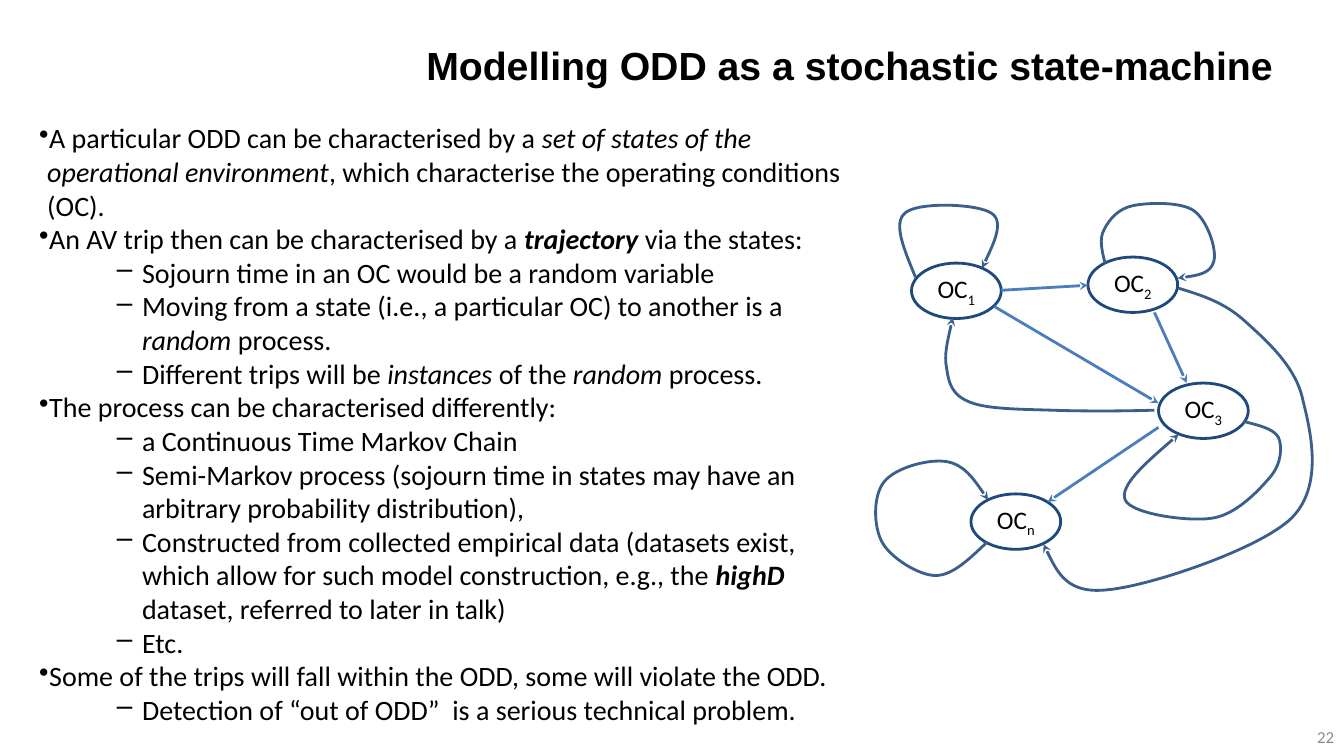
import pptx
import pptx.util
import pptx.dml.color
import pptx.enum.shapes
import pptx.enum.text
import pptx.oxml
import pptx.oxml.ns
from lxml import etree

RGBColor = pptx.dml.color.RGBColor
BLACK = RGBColor(0x00, 0x00, 0x00)
WHITE = RGBColor(0xFF, 0xFF, 0xFF)
GREY = RGBColor(0x8C, 0x8C, 0x8C)
NAVY = RGBColor(0x1F, 0x49, 0x7D)
SLATE = RGBColor(0x3A, 0x5F, 0x8C)
BLUE = RGBColor(0x4B, 0x7E, 0xBC)
ALIGN = pptx.enum.text.PP_ALIGN
MIDDLE = pptx.enum.text.MSO_ANCHOR.MIDDLE
Inches = pptx.util.Inches

BODY = [
    (0, "A particular ODD can be characterised by a |i:set of states of the operational environment"
        "|, which characterise the operating conditions (OC)."),
    (0, "An AV trip then can be characterised by a |bi:trajectory| via the states:"),
    (3, "Sojourn time in an OC would be a random variable"),
    (3, "Moving from a state (i.e., a particular OC) to another is a |i:random| process."),
    (3, "Different trips will be |i:instances| of the |i:random| process."),
    (0, "The process can be characterised differently:"),
    (3, "a Continuous Time Markov Chain"),
    (3, "Semi-Markov process (sojourn time in states may have an arbitrary probability distribution),"),
    (3, "Constructed from collected empirical data (datasets exist, which allow for such model "
        "construction, e.g., the |bi:highD| dataset, referred to later in talk)"),
    (3, "Etc."),
    (0, "Some of the trips will fall within the ODD, some will violate the ODD."),
    (3, "Detection of “out of ODD”  is a serious technical problem."),
]
INDENT = {0: ("•", 0.08, -0.38), 3: ("–", 1.02, -0.25)}

STATES = [("1", 0.35, 0.59), ("2", 2.1, 0.53), ("3", 2.8, 1.78), ("n", 0.94, 2.88)]
MOVES = [
    (1.24, 0.86, 2.1, 0.81),
    (1.17, 1.02, 2.8, 1.98),
    (2.8, 2.22, 1.7, 2.96),
    (2.76, 1.08, 3.08, 1.78),
]
CURVES = [
    [(0.39, 0.73), (0.28, 0.46), (0.16, 0.19), (0.29, 0.09), (0.42, -0.02), (1.02, 0),
     (1.15, 0.1), (1.28, 0.19), (1.05, 0.64), (1.05, 0.64)],
    [(3, 0.84), (3.23, 0.91), (3.45, 0.98), (3.65, 1.16), (3.86, 1.35), (4.16, 1.61),
     (4.23, 1.94), (4.31, 2.26), (4.44, 2.8), (4.12, 3.12), (3.8, 3.43), (2.72, 3.79),
     (2.31, 3.83), (1.9, 3.88), (1.78, 3.63), (1.66, 3.38)],
    [(2.76, 2.05), (2.4, 2.06), (2.04, 2.06), (1.74, 2.05), (1.43, 2.04), (1.1, 2.04),
     (0.93, 1.97), (0.75, 1.9), (0.72, 1.78), (0.7, 1.64), (0.67, 1.5), (0.72, 1.32),
     (0.76, 1.13)],
    [(2.27, 0.59), (2.24, 0.47), (2.21, 0.35), (2.26, 0.26), (2.31, 0.16), (2.4, 0.05),
     (2.55, 0.02), (2.7, -0.01), (3.02, -0.02), (3.15, 0.07), (3.29, 0.17), (3.38, 0.46),
     (3.35, 0.57), (3.32, 0.69), (3.16, 0.72), (2.99, 0.74)],
    [(3.64, 2.16), (3.79, 2.2), (3.94, 2.23), (3.99, 2.32), (4.03, 2.41), (4.02, 2.58),
     (3.91, 2.71), (3.8, 2.84), (3.58, 3.08), (3.34, 3.12), (3.1, 3.16), (2.53, 3.08),
     (2.47, 2.94), (2.41, 2.8), (2.71, 2.54), (3, 2.29)],
    [(1.1, 3.36), (0.93, 3.52), (0.76, 3.69), (0.59, 3.69), (0.42, 3.69), (0.14, 3.51),
     (0.06, 3.36), (-0.03, 3.2), (-0.03, 2.89), (0.08, 2.76), (0.19, 2.62), (0.52, 2.53),
     (0.7, 2.56), (0.87, 2.59), (0.99, 2.76), (1.11, 2.94)],
]


def style(para, size, color, name="Calibri", bold=None):
    """Set the font that all runs of a paragraph share."""
    font = para.font
    font.size, font.name, font.bold = pptx.util.Pt(size), name, bold
    font.color.rgb = color


def frame(slide, box):
    """Add a wrapping text box and return its text frame."""
    text = slide.shapes.add_textbox(*map(Inches, box)).text_frame
    text.word_wrap = True
    return text


def label(slide, box, words, align, *font):
    """Write one vertically centred line of text in the box."""
    text = frame(slide, box)
    text.vertical_anchor = MIDDLE
    para = text.paragraphs[0]
    para.text, para.alignment = words, align
    style(para, *font)


def points(slide, box):
    """Write the bulleted list in the box."""
    text = frame(slide, box)
    for i, (level, words) in enumerate(BODY):
        para = text.add_paragraph() if i else text.paragraphs[0]
        para.level = level
        mark, left, hang = INDENT[level]
        props = para._p.get_or_add_pPr()
        props.set("marL", str(Inches(left)))
        props.set("indent", str(Inches(hang)))
        bullet = etree.SubElement(props, pptx.oxml.ns.qn("a:buChar"))
        bullet.set("char", mark)
        style(para, 20, BLACK)
        for part in words.split("|"):
            run = para.add_run()
            for tag, bold in (("bi:", True), ("i:", None)):
                if part.startswith(tag):
                    part = part[len(tag):]
                    run.font.italic, run.font.bold = True, bold
            run.text = part


def arrow(shape, color):
    """Give a line its colour, width and arrowhead, and no shadow."""
    shape.line.color.rgb, shape.line.width = color, pptx.util.Pt(2)
    tail = etree.SubElement(shape.line._get_or_add_ln(), pptx.oxml.ns.qn("a:tailEnd"))
    tail.set("type", "stealth")
    props = shape._element.spPr
    if props.find(pptx.oxml.ns.qn("a:effectLst")) is None:
        etree.SubElement(props, pptx.oxml.ns.qn("a:effectLst"))


def curve(slide, spots):
    """Draw a chain of Bezier curves through a start and triples of points."""
    build = slide.shapes.build_freeform(*spots[0], scale=1.0)
    build.add_line_segments(spots[1:], close=False)
    shape = build.convert_to_shape()
    shape.fill.background()
    steps = list(shape._element.iter(pptx.oxml.ns.qn("a:lnTo")))
    for i in range(0, len(steps), 3):
        bend = etree.Element(pptx.oxml.ns.qn("a:cubicBezTo"))
        steps[i].addprevious(bend)
        for step in steps[i:i + 3]:
            bend.append(step[0])
            step.getparent().remove(step)
    arrow(shape, SLATE)


def state(slide, box, sub):
    """Draw one operating condition with its subscript."""
    oval = slide.shapes.add_shape(pptx.enum.shapes.MSO_SHAPE.OVAL, *map(Inches, box))
    oval.shadow.inherit = False
    oval.fill.solid()
    oval.fill.fore_color.rgb = WHITE
    oval.line.color.rgb, oval.line.width = NAVY, pptx.util.Pt(2)
    text = oval.text_frame
    text.vertical_anchor, text.word_wrap = MIDDLE, False
    para = text.paragraphs[0]
    para.alignment = ALIGN.CENTER
    style(para, 18, BLACK)
    para.add_run().text = "OC"
    low = para.add_run()
    low.text = sub
    low.font._element.set("baseline", "-25000")


def graph(slide, left, top):
    """Draw the state machine from its top left corner."""
    for sub, x, y in STATES:
        state(slide, (left + x, top + y, 0.89, 0.55), sub)
    for x1, y1, x2, y2 in MOVES:
        ends = map(Inches, (left + x1, top + y1, left + x2, top + y2))
        line = slide.shapes.add_connector(pptx.enum.shapes.MSO_CONNECTOR.STRAIGHT, *ends)
        arrow(line, BLUE)
    for spots in CURVES:
        curve(slide, [(Inches(left + x), Inches(top + y)) for x, y in spots])


def main():
    """Build and save the slide."""
    deck = pptx.Presentation()
    deck.slide_width, deck.slide_height = Inches(13.33), Inches(7.5)
    slide = deck.slides.add_slide(deck.slide_layouts[6])
    label(slide, (4.13, 0.13, 9.02, 1.02), "Modelling ODD as a stochastic state-machine",
          ALIGN.LEFT, 28, BLACK, "Arial", True)
    points(slide, (0.29, 1.15, 8.31, 6.22))
    label(slide, (10.22, 7.11, 3.11, 0.4), "22", ALIGN.RIGHT, 12, GREY)
    graph(slide, 8.69, 2.02)
    deck.save("out.pptx")


if __name__ == "__main__":
    main()
